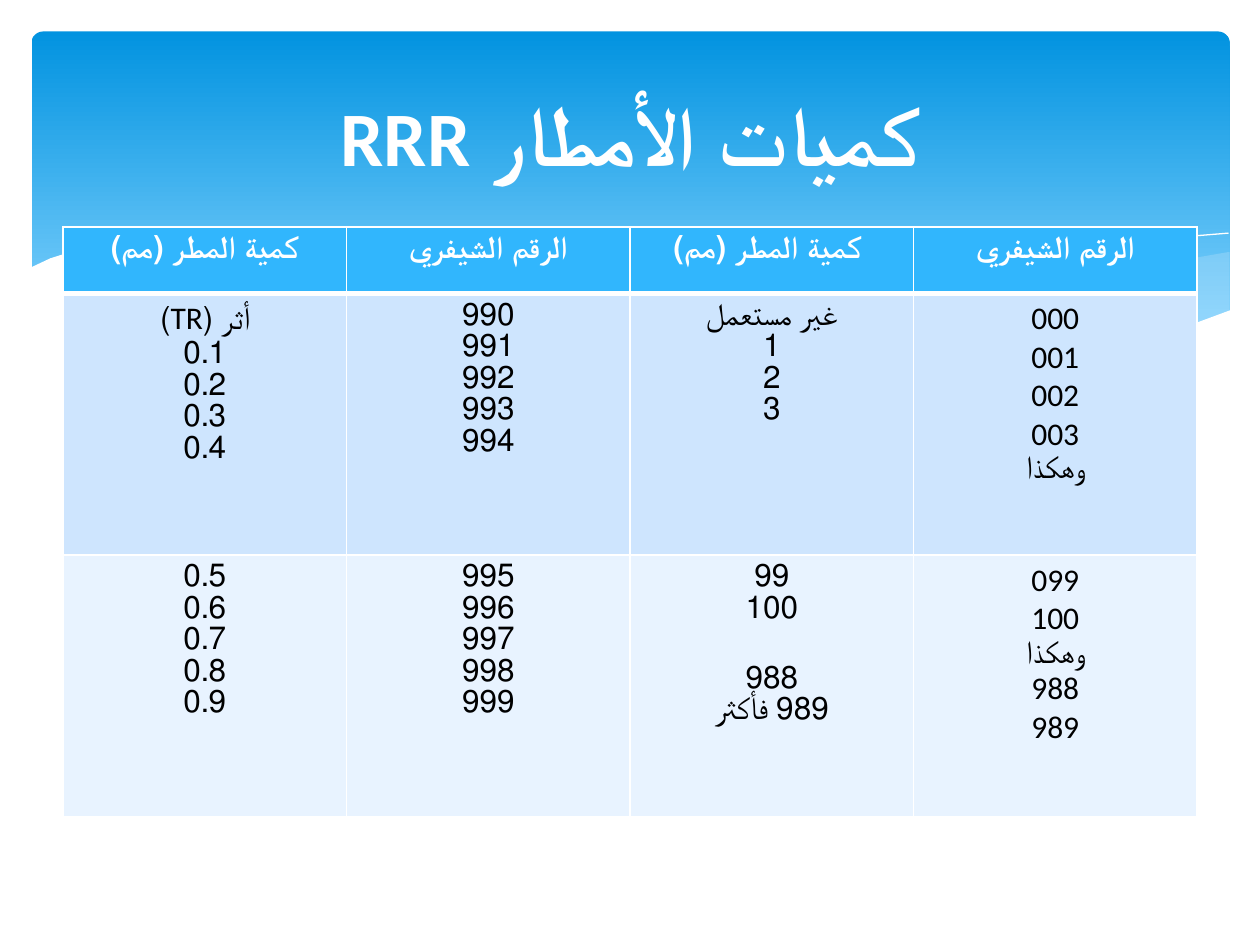
"""Build a slide with a table of rainfall codes under a wave banner."""
import pptx
import pptx.dml.color
import pptx.enum.shapes
import pptx.enum.text
import pptx.oxml
import pptx.oxml.ns
import pptx.util

Pt = pptx.util.Pt
hues = {
    "deep": "0293E0", "pale": "83D3FE", "mist": "C6E7FC", "white": "FFFFFF",
    "head": "31B6FD", "odd": "CEE5FE", "even": "E8F3FF", "ink": "000000",
}
rgb = {name: pptx.dml.color.RGBColor.from_string(hue) for name, hue in hues.items()}
space = pptx.oxml.ns.nsdecls("a")
mid = pptx.enum.text.PP_ALIGN.CENTER

deck = pptx.Presentation()
deck.slide_width, deck.slide_height = Pt(720), Pt(540)
slide = deck.slides.add_slide(deck.slide_layouts[6])
shapes = slide.shapes

banner = shapes.add_shape(
    pptx.enum.shapes.MSO_SHAPE.ROUNDED_RECTANGLE, Pt(18), Pt(18), Pt(684.7), Pt(194.4))
banner.adjustments[0] = 0.034
banner.shadow.inherit = False
banner.line.fill.background()
banner.fill.gradient()
banner.fill.gradient_angle = 270
for stop, hue, place in zip(banner.fill.gradient_stops, ("deep", "pale"), (0, 0.9)):
    stop.color.rgb = rgb[hue]
    stop.position = place

waves = [
    ("mist", 29, [
        (975, 200), (935, 207), (891, 216), (832, 230), (779, 242), (729, 253),
        (683, 262), (661, 265), (691, 269), (732, 274), (769, 277), (814, 278),
        (854, 276), (889, 272), (921, 265), (949, 257), (976, 247), (976, 200)]),
    ("mist", 40, [
        (893, 273), (837, 265), (775, 254), (706, 240), (629, 222), (584, 211),
        (541, 203), (502, 196), (442, 189), (380, 185), (328, 187), (286, 191),
        (342, 199), (404, 211), (449, 222), (530, 240), (601, 255), (665, 266),
        (722, 274), (773, 277), (818, 278), (857, 277)]),
    ("white", 0, [
        (309, 195), (344, 190), (387, 187), (433, 187), (489, 190), (556, 197),
        (608, 204), (665, 213), (727, 226), (795, 241), (869, 261), (907, 272)]),
    ("white", 0, [
        (613, 257), (672, 241), (748, 223), (806, 210), (866, 199), (910, 192),
        (951, 187), (975, 185)]),
    ("white", 100, [
        (977, 246), (950, 256), (920, 265), (887, 271), (850, 275), (809, 277),
        (761, 275), (708, 270), (648, 262), (579, 250), (503, 233), (447, 220),
        (391, 207), (340, 197), (292, 190), (250, 186), (211, 184), (161, 184),
        (119, 187), (85, 193), (59, 199), (40, 205), (23, 213), (23, 329), (977, 329)]),
]
for hue, alpha, dots in waves:
    pen = shapes.build_freeform(*dots[0], scale=Pt(0.72))
    pen.add_line_segments(dots[1:], close=alpha > 0)
    wave = pen.convert_to_shape()
    wave.shadow.inherit = False
    if alpha:
        wave.line.fill.background()
        wave.fill.solid()
        wave.fill.fore_color.rgb = rgb[hue]
        if alpha < 100:
            tint = wave.fill._xPr.find(".//" + pptx.oxml.ns.qn("a:srgbClr"))
            tint.append(pptx.oxml.parse_xml(f'<a:alpha {space} val="{alpha * 1000}"/>'))
    else:
        wave.fill.background()
        wave.line.color.rgb = rgb[hue]
        wave.line.width = Pt(0)

rows = [
    ["كمية المطر (مم)", "الرقم الشيفري", " كمية المطر (مم)", "الرقم الشيفري"],
    ["أثر (TR)\n0.1\n0.2\n0.3\n0.4", "990\n991\n992\n993\n994",
     "غير مستعمل\n1\n2\n3", "000\n001\n002\n003\nوهكذا"],
    ["0.5\n0.6\n0.7\n0.8\n0.9", "995\n996\n997\n998\n999",
     "99\n100\n988\n989 فأكثر", "099\n100\nوهكذا\n988\n989"],
]
table = shapes.add_table(3, 4, Pt(36), Pt(129.6), Pt(648), Pt(337)).table
for column in table.columns:
    column.width = Pt(162)
for row, height in zip(table.rows, (38.2, 149.4, 149.4)):
    row.height = Pt(height)
for r, (texts, hue) in enumerate(zip(rows, ("head", "odd", "even"))):
    for c, text in enumerate(texts):
        cell = table.cell(r, c)
        cell.text = text
        edges = cell._tc.get_or_add_tcPr()
        for side in "LRTB":
            width = 3 if (r, side) in ((0, "B"), (1, "T")) else 1
            edges.append(pptx.oxml.parse_xml(
                f'<a:ln{side} {space} w="{Pt(width)}"><a:solidFill>'
                f'<a:srgbClr val="{hues["white"]}"/></a:solidFill></a:ln{side}>'))
        cell.fill.solid()
        cell.fill.fore_color.rgb = rgb[hue]
        for line in cell.text_frame.paragraphs:
            line.alignment = mid
            if c < 3 and (r, c) != (0, 1):
                line._p.get_or_add_pPr().set("rtl", "1")
            if c == 2 and line.text == "988":
                line.space_before = Pt(22)
            line.font.name = "Calibri"
            line.font.size = Pt(18)
            line.font.bold = r == 0
            line.font.color.rgb = rgb["ink" if r else "white"]

title = shapes.add_textbox(Pt(36), Pt(26.6), Pt(648), Pt(98.6)).text_frame
title.word_wrap = True
title.vertical_anchor = pptx.enum.text.MSO_ANCHOR.MIDDLE
line = title.paragraphs[0]
line.alignment = mid
line._p.get_or_add_pPr().set("rtl", "1")
line.font.name = "Calibri"
line.font.bold = True
line.font.color.rgb = rgb["white"]
for text, size in (("كميات الأمطار ", 48), ("RRR", 44)):
    run = line.add_run()
    run.text = text
    run.font.size = Pt(size)

deck.save("out.pptx")
